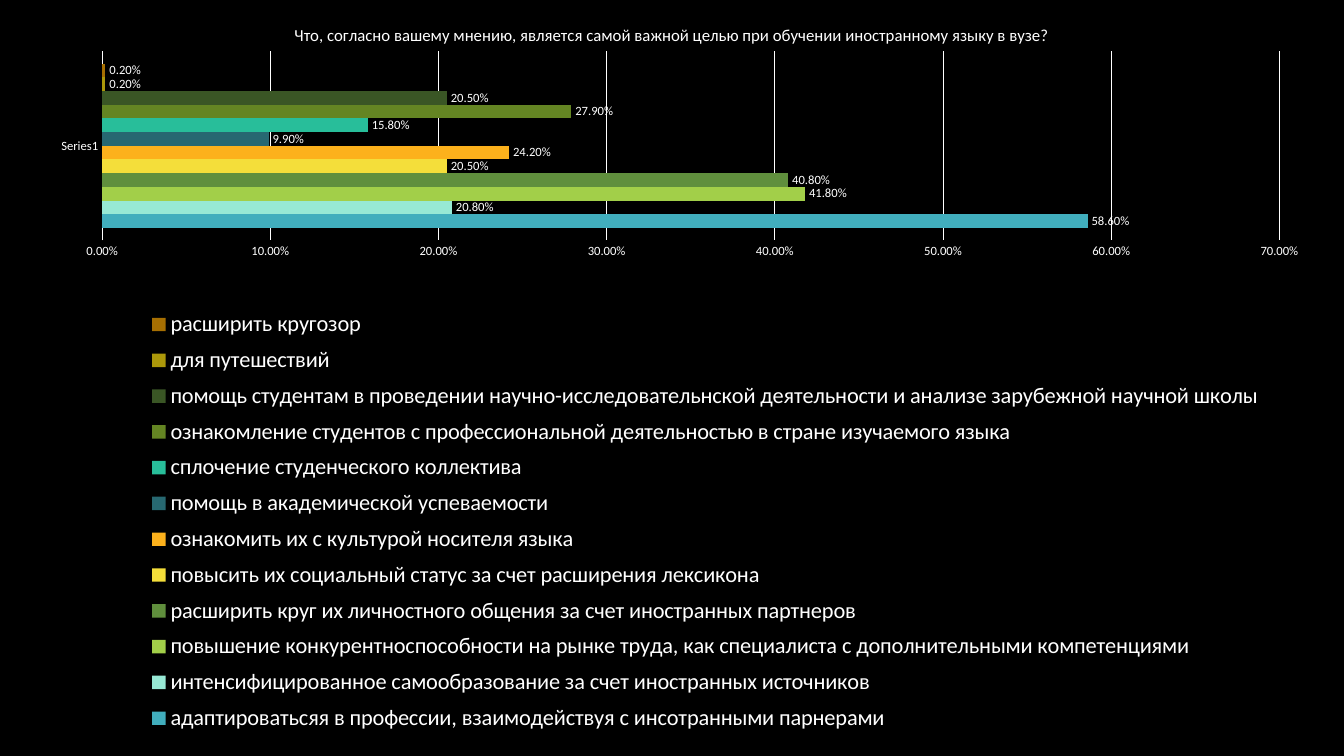
from lxml import etree
from pptx import Presentation
from pptx.chart.data import CategoryChartData
from pptx.dml.color import RGBColor
from pptx.enum.chart import XL_CHART_TYPE, XL_LABEL_POSITION, XL_LEGEND_POSITION, XL_TICK_MARK
from pptx.oxml.ns import qn
from pptx.util import Cm, Pt

BAR_CLUSTERED = XL_CHART_TYPE.BAR_CLUSTERED
OUTSIDE_END = XL_LABEL_POSITION.OUTSIDE_END
BOTTOM = XL_LEGEND_POSITION.BOTTOM
NO_TICK = XL_TICK_MARK.NONE

BLACK = RGBColor(0x00, 0x00, 0x00)
WHITE = RGBColor(0xFF, 0xFF, 0xFF)
TEAL = RGBColor(0x41, 0xAE, 0xBD)
MINT = RGBColor(0x97, 0xE9, 0xD5)
LIME = RGBColor(0xA2, 0xCF, 0x49)
GREEN = RGBColor(0x60, 0x8F, 0x3D)
YELLOW = RGBColor(0xF4, 0xDE, 0x3A)
ORANGE = RGBColor(0xFC, 0xB1, 0x1C)
DARK_TEAL = RGBColor(0x27, 0x68, 0x71)
EMERALD = RGBColor(0x28, 0xBE, 0x9A)
OLIVE = RGBColor(0x64, 0x85, 0x23)
DARK_GREEN = RGBColor(0x3A, 0x56, 0x25)
MUSTARD = RGBColor(0xAC, 0x98, 0x0A)
BROWN = RGBColor(0xA6, 0x6F, 0x02)

FONT = "Calibri"
PERCENT = "0.00%"
QUESTION = "Что, согласно вашему мнению, является самой важной целью при обучении иностранному языку в вузе?"
CATEGORY = "Series1"
GOALS = [
    ("адаптироватьсяя в профессии, взаимодействуя с инсотранными парнерами", 0.586, TEAL),
    ("интенсифицированное самообразование за счет иностранных источников", 0.208, MINT),
    ("повышение конкурентноспособности на рынке труда, как специалиста с дополнительными компетенциями", 0.418, LIME),
    ("расширить круг их личностного общения за счет иностранных партнеров", 0.408, GREEN),
    ("повысить их социальный статус за счет расширения лексикона", 0.205, YELLOW),
    ("ознакомить их с культурой носителя языка", 0.242, ORANGE),
    ("помощь в академической успеваемости", 0.099, DARK_TEAL),
    ("сплочение студенческого коллектива", 0.158, EMERALD),
    ("ознакомление студентов с профессиональной деятельностью в стране изучаемого языка", 0.279, OLIVE),
    ("помощь студентам в проведении научно-исследовательнской деятельности и анализе зарубежной научной школы",
     0.205, DARK_GREEN),
    ("для путешествий", 0.002, MUSTARD),
    ("расширить кругозор", 0.002, BROWN),
]
PLOT_AREA = {"x": 0.076, "y": 0.068, "w": 0.876, "h": 0.25}
LEGEND_AREA = {"x": 0.1, "y": 0.4, "w": 0.85, "h": 0.58}


def style_font(font, size):
    font.name = FONT
    font.size = Pt(size)
    font.bold = False
    font.color.rgb = WHITE


def style_line(line):
    line.color.rgb = WHITE
    line.width = Pt(0.75)


def place(element, area, index, inner=False):
    for old_layout in element.findall(qn("c:layout")):
        element.remove(old_layout)
    layout = etree.Element(qn("c:layout"))
    manual = etree.SubElement(layout, qn("c:manualLayout"))
    settings = [("layoutTarget", "inner")] if inner else []
    settings += [("xMode", "edge"), ("yMode", "edge"), *area.items()]
    for tag, value in settings:
        etree.SubElement(manual, qn("c:" + tag)).set("val", str(value))
    element.insert(index, layout)


def style_axis(axis):
    axis.major_tick_mark = NO_TICK
    axis.minor_tick_mark = NO_TICK
    style_font(axis.tick_labels.font, 9)


def add_goals_chart(slide, width, height):
    data = CategoryChartData(number_format=PERCENT)
    data.categories = [CATEGORY]
    for name, share, _ in GOALS:
        data.add_series(name, [share])
    chart = slide.shapes.add_chart(BAR_CLUSTERED, 0, 0, width, height, data).chart
    style_font(chart.font, 10)

    chart.has_title = True
    chart.chart_title.include_in_layout = False
    chart.chart_title.text_frame.text = QUESTION
    style_font(chart.chart_title.text_frame.paragraphs[0].runs[0].font, 12)

    plot = chart.plots[0]
    plot.gap_width = 182
    plot.overlap = 0
    plot.vary_by_categories = False
    for series, (_, _, color) in zip(plot.series, GOALS):
        series.format.fill.solid()
        series.format.fill.fore_color.rgb = color
        labels = series.data_labels
        labels.show_value = True
        labels.position = OUTSIDE_END
        labels.number_format = PERCENT
        labels.number_format_is_linked = False
        style_font(labels.font, 9)

    style_axis(chart.category_axis)
    style_line(chart.category_axis.format.line)
    value_axis = chart.value_axis
    style_axis(value_axis)
    value_axis.minimum_scale = 0
    value_axis.maximum_scale = 0.7
    value_axis.major_unit = 0.1
    value_axis.tick_labels.number_format = PERCENT
    value_axis.tick_labels.number_format_is_linked = False
    value_axis.format.line.fill.background()
    style_line(value_axis.major_gridlines.format.line)

    chart.has_legend = True
    chart.legend.position = BOTTOM
    chart.legend.include_in_layout = False
    style_font(chart.legend.font, 16)
    place(chart.legend._element, LEGEND_AREA, 1)
    place(chart._chartSpace.chart.plotArea, PLOT_AREA, 0, inner=True)


def main():
    presentation = Presentation()
    presentation.slide_width = Cm(33.87)
    presentation.slide_height = Cm(19.05)
    slide = presentation.slides.add_slide(presentation.slide_layouts[6])
    slide.background.fill.solid()
    slide.background.fill.fore_color.rgb = BLACK
    add_goals_chart(slide, presentation.slide_width, presentation.slide_height)
    presentation.save("out.pptx")


if __name__ == "__main__":
    main()
